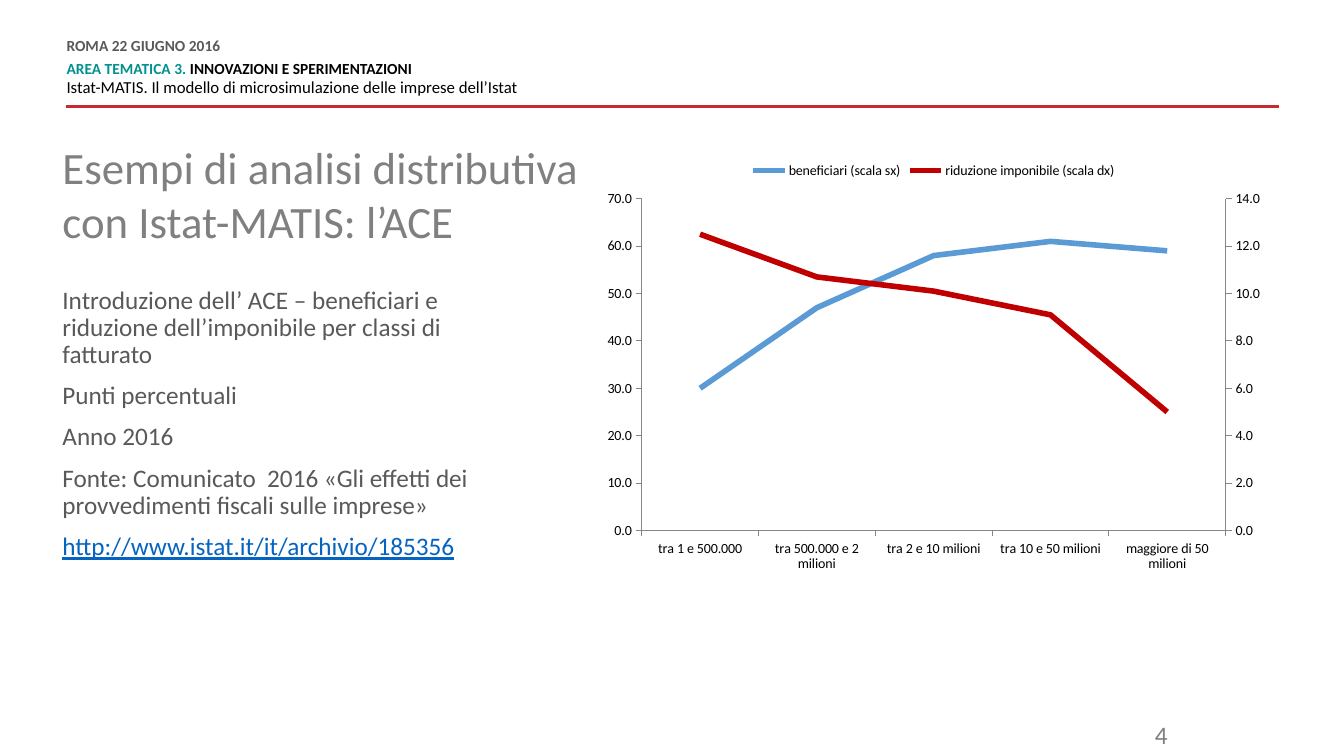
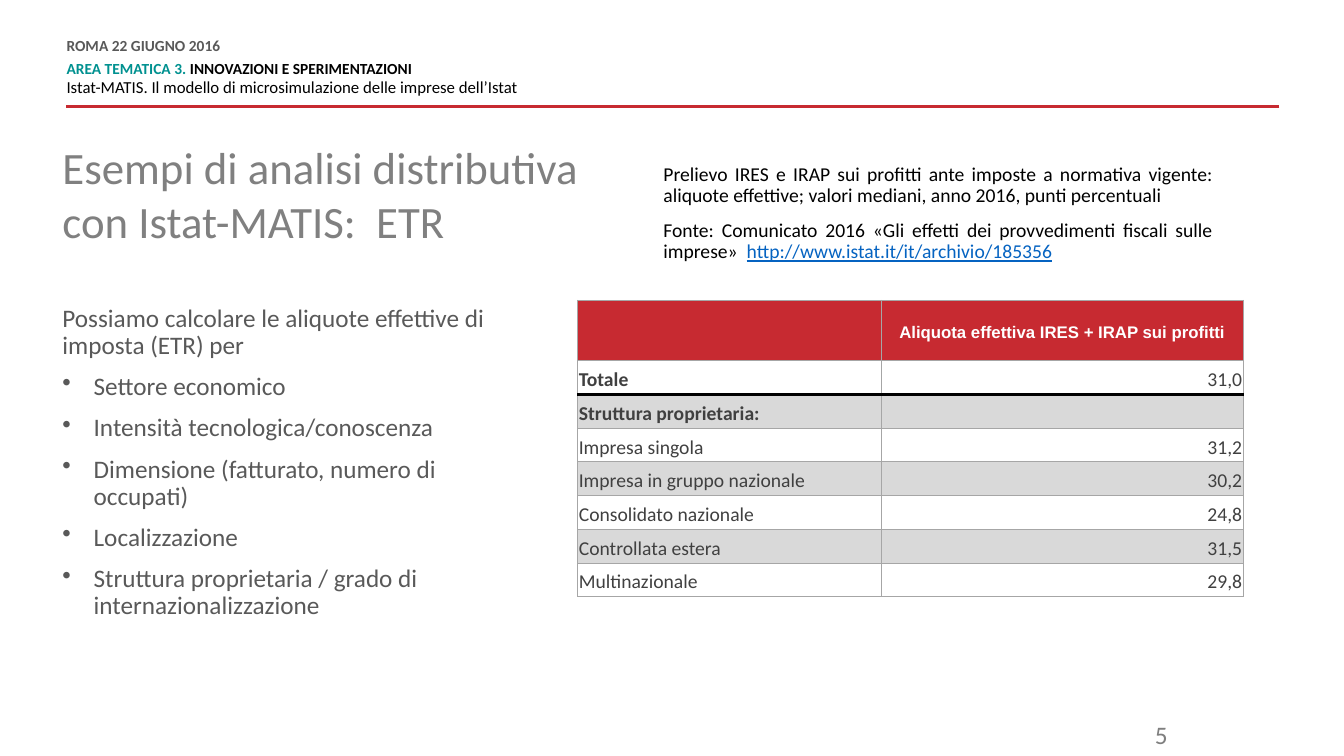
from copy import deepcopy
from lxml import etree
from pptx import Presentation
from pptx import util as u
from pptx.chart.data import CategoryChartData
from pptx.dml.color import RGBColor
from pptx.enum import chart as ch, shapes, text
from pptx.oxml import parse_xml
from pptx.oxml.ns import nsdecls, qn

RED, TEAL, BLUE, BLACK, WHITE = "C72A31", "009190", "0563C1", "000000", "FFFFFF"
GREY, DARK, SOFT, EDGE, BAND = "595959", "404040", "808080", "A6A6A6", "D9D9D9"
LEFT, RIGHT = text.PP_ALIGN.LEFT, text.PP_ALIGN.RIGHT
MID, FULL = text.PP_ALIGN.CENTER, text.PP_ALIGN.JUSTIFY
LINK = "http://www.istat.it/it/archivio/185356"


def hue(code):
    return RGBColor.from_string(code)


def font(item, size, color, bold=False, line=False, name="Calibri"):
    item.name, item.size, item.bold = name, u.Pt(size), bold
    item.underline = line
    item.color.rgb = hue(color)


def para(part, runs, align=LEFT, space=1.0, before=0, after=0, dot=False):
    for words, style in runs:
        run = part.add_run()
        run.text = words
        font(run.font, **style)
    part.alignment, part.line_spacing = align, space
    part.space_before, part.space_after = u.Pt(before), u.Pt(after)
    if dot:
        props = part._p.get_or_add_pPr()
        props.set("marL", str(u.Inches(0.31)))
        props.set("indent", str(-u.Inches(0.31)))
        props.append(parse_xml(f'<a:buChar {nsdecls("a")} char="•"/>'))


class Deck:
    head = dict(size=32, color=SOFT)
    body = dict(size=18, color=GREY)
    note = dict(size=14, color=BLACK)

    def __init__(self):
        self.show = Presentation()
        self.show.slide_width = u.Inches(13.33)
        self.show.slide_height = u.Inches(7.5)
        self.slide = None

    def x(self, share):
        return round(self.show.slide_width * share / 100)

    def y(self, share):
        return round(self.show.slide_height * share / 100)

    def area(self, left, top, width, height):
        return self.x(left), self.y(top), self.x(width), self.y(height)

    def page(self, title, number):
        self.slide = self.show.slides.add_slide(self.show.slide_layouts[5])
        self.title(title)
        self.rule(4.95, 95.2, 14.13)
        small = dict(size=11, bold=True)
        pitch = u.Pt(10.8)
        self.box((4.95, 5.2, 62.57, 7.87), [
            dict(runs=[("ROMA 22 GIUGNO 2016", dict(small, color=GREY))], space=pitch, after=6),
            dict(runs=[("AREA TEMATICA 3. ", dict(small, color=TEAL)),
                       ("INNOVAZIONI E SPERIMENTAZIONI", dict(small, color=BLACK))], space=pitch),
            dict(runs=[("Istat-MATIS. Il modello di microsimulazione delle imprese dell’Istat",
                        dict(size=12, color=BLACK))], space=pitch, before=3, after=6)])
        self.box((78.77, 94.53, 8.85, 4.67),
                 [dict(runs=[(str(number), dict(size=18, color="7F7F7F"))], align=RIGHT)],
                 pad=(0.1, 0.05))

    def title(self, words):
        shape = self.slide.shapes.title
        shape.left, shape.top, shape.width, shape.height = self.area(4.65, 18.53, 87.77, 14.53)
        frame = shape.text_frame
        frame.text = words
        self.frame(frame)
        part = frame.paragraphs[0]
        para(part, [])
        for run in part.runs:
            font(run.font, **self.head)
        for gap in part._p.findall(qn("a:br")):
            etree.SubElement(gap, qn("a:rPr"), sz=str(self.head["size"] * 100))

    def frame(self, frame, pad=(0, 0)):
        frame.word_wrap = True
        frame.auto_size = text.MSO_AUTO_SIZE.NONE
        frame.vertical_anchor = text.MSO_ANCHOR.TOP
        frame.margin_left = frame.margin_right = u.Inches(pad[0])
        frame.margin_top = frame.margin_bottom = u.Inches(pad[1])

    def box(self, place, items, pad=(0, 0)):
        frame = self.slide.shapes.add_textbox(*self.area(*place)).text_frame
        self.frame(frame, pad)
        for i, item in enumerate(items):
            para(frame.add_paragraph() if i else frame.paragraphs[0], **item)

    def prose(self, place, lines, style, align=LEFT, dots=False):
        self.box(place, [dict(runs=[(part, style) if isinstance(part, str) else part
                                    for part in line],
                              align=align, space=0.9, before=10 if i else 0,
                              dot=dots and i > 0)
                         for i, line in enumerate(lines)])

    def rule(self, start, end, top):
        line = self.slide.shapes.add_connector(
            shapes.MSO_CONNECTOR.STRAIGHT, self.x(end), self.y(top), self.x(start), self.y(top))
        line.line.color.rgb, line.line.width = hue(RED), u.Pt(2)
        etree.SubElement(line._element.spPr, qn("a:effectLst"))

    def chart(self, place, cats, rows):
        data = CategoryChartData(number_format="0.0")
        data.categories = cats
        for name, vals, _ in rows:
            data.add_series(name, vals)
        chart = self.slide.shapes.add_chart(
            ch.XL_CHART_TYPE.LINE, *self.area(*place), data).chart
        font(chart.font, 10, BLACK)
        chart.has_title = False
        chart.has_legend = True
        chart.legend.position = ch.XL_LEGEND_POSITION.TOP
        chart.legend.include_in_layout = False
        plot = chart.plots[0]
        plot.vary_by_categories = False
        for line, (_, _, color) in zip(plot.series, rows):
            line.smooth = False
            line.format.line.color.rgb = hue(color)
            line.format.line.width = u.Pt(4)
        for axis in (chart.category_axis, chart.value_axis):
            axis.has_major_gridlines = False
            axis.major_tick_mark = ch.XL_TICK_MARK.OUTSIDE
            axis.format.line.color.rgb = hue("868686")
            axis.format.line.width = u.Pt(0.75)
        labels = chart.value_axis.tick_labels
        labels.number_format, labels.number_format_is_linked = "#,##0.0", False
        chart.value_axis.minimum_scale = 0
        self.twin(plot._element)

    def twin(self, main):
        area = main.getparent()
        twin = deepcopy(main)
        twin.remove(twin.findall(qn("c:ser"))[0])
        main.remove(main.findall(qn("c:ser"))[1])
        main.addnext(twin)
        keys = ("50010", "50020")
        for node, key in zip(twin.findall(qn("c:axId")), keys):
            node.set("val", key)
        last = area.find(qn("c:valAx"))
        for tag, key, other in (("c:valAx", keys[1], keys[0]), ("c:catAx", *keys)):
            axis = deepcopy(area.find(qn(tag)))
            axis.find(qn("c:axId")).set("val", key)
            axis.find(qn("c:crossAx")).set("val", other)
            if tag == "c:valAx":
                axis.find(qn("c:axPos")).set("val", "r")
                axis.find(qn("c:crosses")).set("val", "max")
            else:
                axis.find(qn("c:delete")).set("val", "1")
            last.addnext(axis)
            last = axis

    def table(self, place, cols, tops, rows):
        grid = self.slide.shapes.add_table(len(rows), len(cols), *self.area(*place)).table
        grid.first_row = grid.horz_banding = False
        for col, width in zip(grid.columns, cols):
            col.width = self.x(width)
        for r, row in enumerate(rows):
            grid.rows[r].height = self.y(tops[min(r, 1)])
            for c, words in enumerate(row):
                cell = grid.cell(r, c)
                self.edges(cell, r)
                cell.fill.solid()
                cell.fill.fore_color.rgb = hue(WHITE if r % 2 else BAND if r else RED)
                cell.vertical_anchor = text.MSO_ANCHOR.MIDDLE
                cell.margin_left = cell.margin_right = cell.margin_top = u.Inches(0.01)
                cell.margin_bottom = 0
                style = (dict(size=14, color=DARK, bold=c == 0 and r < 3) if r else
                         dict(size=12, color=WHITE, bold=True, name="Arial"))
                para(cell.text_frame.paragraphs[0], [(words, style)] if words else [],
                     (RIGHT if c else LEFT) if r else MID, 1.15)

    def edges(self, cell, row):
        props = cell._tc.get_or_add_tcPr()
        for side in "LRTB":
            thick = (row, side) in ((1, "B"), (2, "T"))
            color, width = (BLACK, 3) if thick else (EDGE, 0.75)
            props.append(parse_xml(
                f'<a:ln{side} {nsdecls("a")} w="{u.Pt(width)}"><a:solidFill>'
                f'<a:srgbClr val="{color}"/></a:solidFill></a:ln{side}>'))


def main():
    deck = Deck()
    deck.page("Esempi di analisi distributiva \vcon Istat-MATIS: l’ACE", 4)
    deck.prose((4.65, 38, 33.38, 39), [
        ["Introduzione dell’ ACE – beneficiari e riduzione dell’imponibile per classi di fatturato"],
        ["Punti percentuali"],
        ["Anno 2016"],
        ["Fonte: Comunicato  2016 «Gli effetti dei provvedimenti fiscali sulle imprese»"],
        [(LINK, dict(size=18, color=BLUE, line=True))]], deck.body)
    deck.chart(
        (44.19, 20, 50.56, 56.8),
        ["tra 1 e 500.000", "tra 500.000 e 2 milioni", "tra 2 e 10 milioni",
         "tra 10 e 50 milioni", "maggiore di 50 milioni"],
        [("beneficiari (scala sx)", (30, 47, 58, 61, 59), "5B9BD5"),
         ("riduzione imponibile (scala dx)", (12.5, 10.7, 10.1, 9.1, 5), "C00000")])

    deck.page("Esempi di analisi distributiva\vcon Istat-MATIS:  ETR", 5)
    deck.prose((4.65, 40.4, 33.38, 43.4), [
        ["Possiamo calcolare le aliquote effettive di imposta (ETR) per"],
        ["Settore economico"],
        ["Intensità tecnologica/conoscenza"],
        ["Dimensione (fatturato, numero di occupati)"],
        ["Localizzazione"],
        ["Struttura proprietaria / grado di internazionalizzazione"]], deck.body, dots=True)
    deck.prose((49.36, 21.73, 40.89, 14.53), [
        ["Prelievo IRES e IRAP sui profitti ante imposte a normativa vigente: "
         "aliquote effettive; valori mediani, anno 2016, punti percentuali"],
        ["Fonte: Comunicato 2016 «Gli effetti dei provvedimenti fiscali sulle imprese»  ",
         (LINK, dict(size=14, color=BLUE, line=True))]], deck.note, FULL)
    deck.table((42.99, 39.73, 49.51, 39.2), (22.58, 26.93), (8, 4.46), [
        ("", "Aliquota effettiva IRES + IRAP sui profitti"),
        ("Totale", "31,0"),
        ("Struttura proprietaria:", ""),
        ("Impresa singola", "31,2"),
        ("Impresa in gruppo nazionale", "30,2"),
        ("Consolidato nazionale", "24,8"),
        ("Controllata estera", "31,5"),
        ("Multinazionale", "29,8")])
    deck.show.save("out.pptx")


if __name__ == "__main__":
    main()
